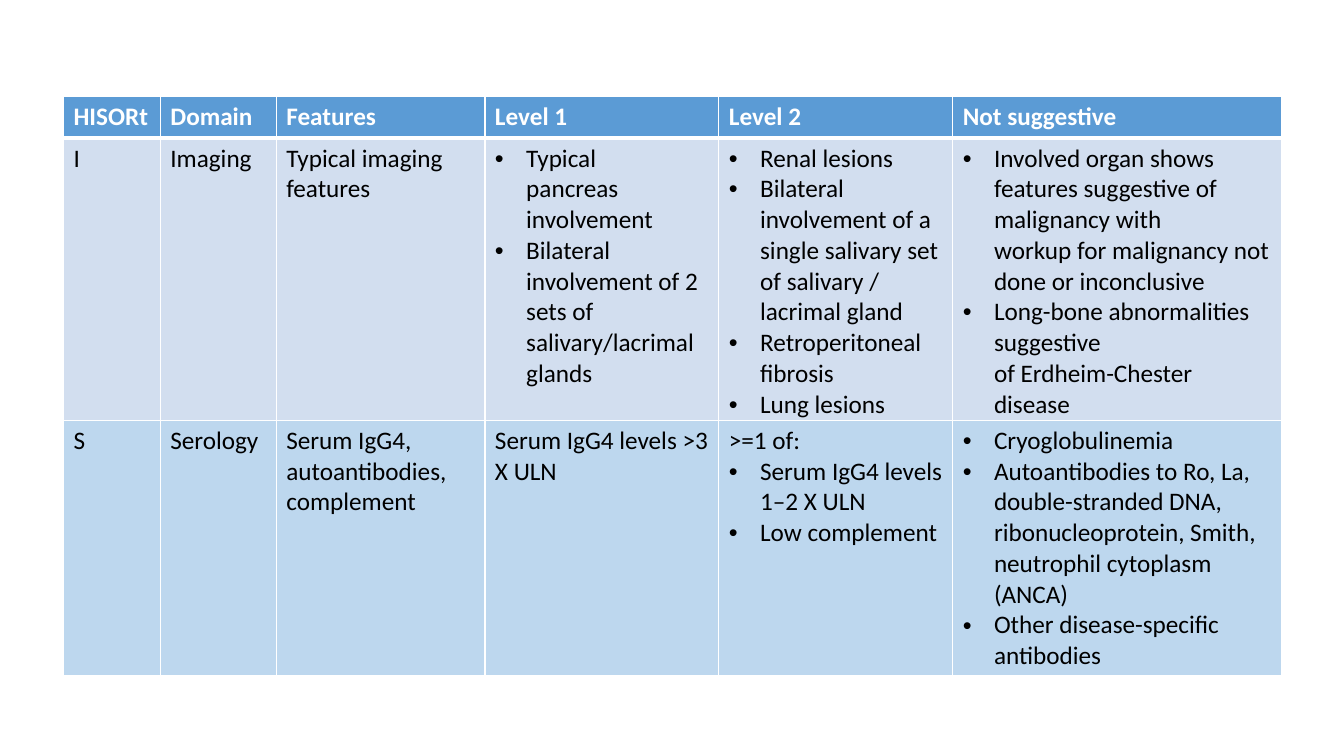
from dataclasses import dataclass

from lxml import etree
from pptx import Presentation
from pptx import util as u
from pptx.dml.color import RGBColor
from pptx.oxml import ns

PX = 9144  # EMU per px, 100 px to the inch
LEFT = 63
COLUMN_WIDTHS = [96, 115, 207, 232, 232, 326]
INDENT = 31
BULLET = "• "
COLORS = {
    "header": "5B9BD5",
    "imaging": "D2DEEF",
    "serology": "BDD7EE",
    "border": "FFFFFF",
    "header_text": "FFFFFF",
    "body_text": "000000",
}


@dataclass
class Row:
    """One table row; each cell is a list of paragraphs, bulleted if marked."""
    height: int
    fill: str
    cells: list[list[str]]
    text_color: str = "body_text"
    bold: bool = False
    top_pt: int = 1
    bottom_pt: int = 1


HEADER = Row(
    41, "header",
    [["HISORt"], ["Domain"], ["Features"], ["Level 1"], ["Level 2"], ["Not suggestive"]],
    text_color="header_text", bold=True, bottom_pt=3,
)
IMAGING = Row(
    280, "imaging",
    [
        ["I"],
        ["Imaging"],
        ["Typical imaging features"],
        ["• Typical\npancreas\ninvolvement",
         "• Bilateral involvement of 2 sets of salivary/lacrimal glands"],
        ["• Renal lesions",
         "• Bilateral involvement of a single salivary set of salivary / lacrimal gland",
         "• Retroperitoneal fibrosis",
         "• Lung lesions"],
        ["• Involved organ shows features suggestive of malignancy with\n"
         "workup for malignancy not done or inconclusive",
         "• Long-bone abnormalities suggestive\nof Erdheim-Chester disease"],
    ],
    top_pt=3,
)
SEROLOGY = Row(
    250, "serology",
    [
        ["S"],
        ["Serology"],
        ["Serum IgG4,\nautoantibodies,\ncomplement"],
        ["Serum IgG4 levels >3 X ULN"],
        [">=1 of:", "• Serum IgG4 levels 1–2 X ULN", "• Low complement"],
        ["• Cryoglobulinemia",
         "• Autoantibodies to Ro, La,\ndouble-stranded DNA,\n"
         "ribonucleoprotein, Smith,\nneutrophil cytoplasm (ANCA)",
         "• Other disease-specific antibodies"],
    ],
    bottom_pt=3,
)


def px(length: int) -> u.Emu:
    return u.Emu(length * PX)


def add_bullet(paragraph) -> None:
    properties = paragraph._p.get_or_add_pPr()
    properties.set("marL", str(px(INDENT)))
    properties.set("indent", str(-px(INDENT)))
    etree.SubElement(properties, ns.qn("a:buFont"), typeface="Arial")
    etree.SubElement(properties, ns.qn("a:buChar"), char=BULLET.strip())


def add_borders(cell, row: Row) -> None:
    properties = cell._tc.get_or_add_tcPr()
    widths = {"lnL": 1, "lnR": 1, "lnT": row.top_pt, "lnB": row.bottom_pt}
    for side, width in widths.items():
        line = etree.SubElement(properties, ns.qn(f"a:{side}"), w=str(u.Pt(width)))
        solid = etree.SubElement(line, ns.qn("a:solidFill"))
        etree.SubElement(solid, ns.qn("a:srgbClr"), val=COLORS["border"])


def fill_cell(cell, paragraphs: list[str], row: Row) -> None:
    add_borders(cell, row)
    cell.fill.solid()
    cell.fill.fore_color.rgb = RGBColor.from_string(COLORS[row.fill])
    frame = cell.text_frame
    for index, wording in enumerate(paragraphs):
        paragraph = frame.add_paragraph() if index else frame.paragraphs[0]
        paragraph.text = wording.removeprefix(BULLET)
        if wording.startswith(BULLET):
            add_bullet(paragraph)
        for run in paragraph.runs:
            run.font.name = "Calibri"
            run.font.size = u.Pt(18)
            run.font.bold = row.bold
            run.font.color.rgb = RGBColor.from_string(COLORS[row.text_color])


def add_criteria(slide, top: int, rows: list[Row]) -> None:
    table = slide.shapes.add_table(
        len(rows), len(COLUMN_WIDTHS), px(LEFT), px(top),
        px(sum(COLUMN_WIDTHS)), px(sum(row.height for row in rows)),
    ).table
    table.first_row = rows[0] is HEADER
    table.horz_banding = False
    for column, width in zip(table.columns, COLUMN_WIDTHS):
        column.width = px(width)
    for table_row, row in zip(table.rows, rows):
        table_row.height = px(row.height)
        for cell, paragraphs in zip(table_row.cells, row.cells):
            fill_cell(cell, paragraphs, row)


def main() -> None:
    deck = Presentation()
    deck.slide_width, deck.slide_height = px(1333), px(750)
    slide = deck.slides.add_slide(deck.slide_layouts[6])
    add_criteria(slide, 96, [HEADER, IMAGING])
    add_criteria(slide, 417, [SEROLOGY])
    deck.save("out.pptx")


if __name__ == "__main__":
    main()
